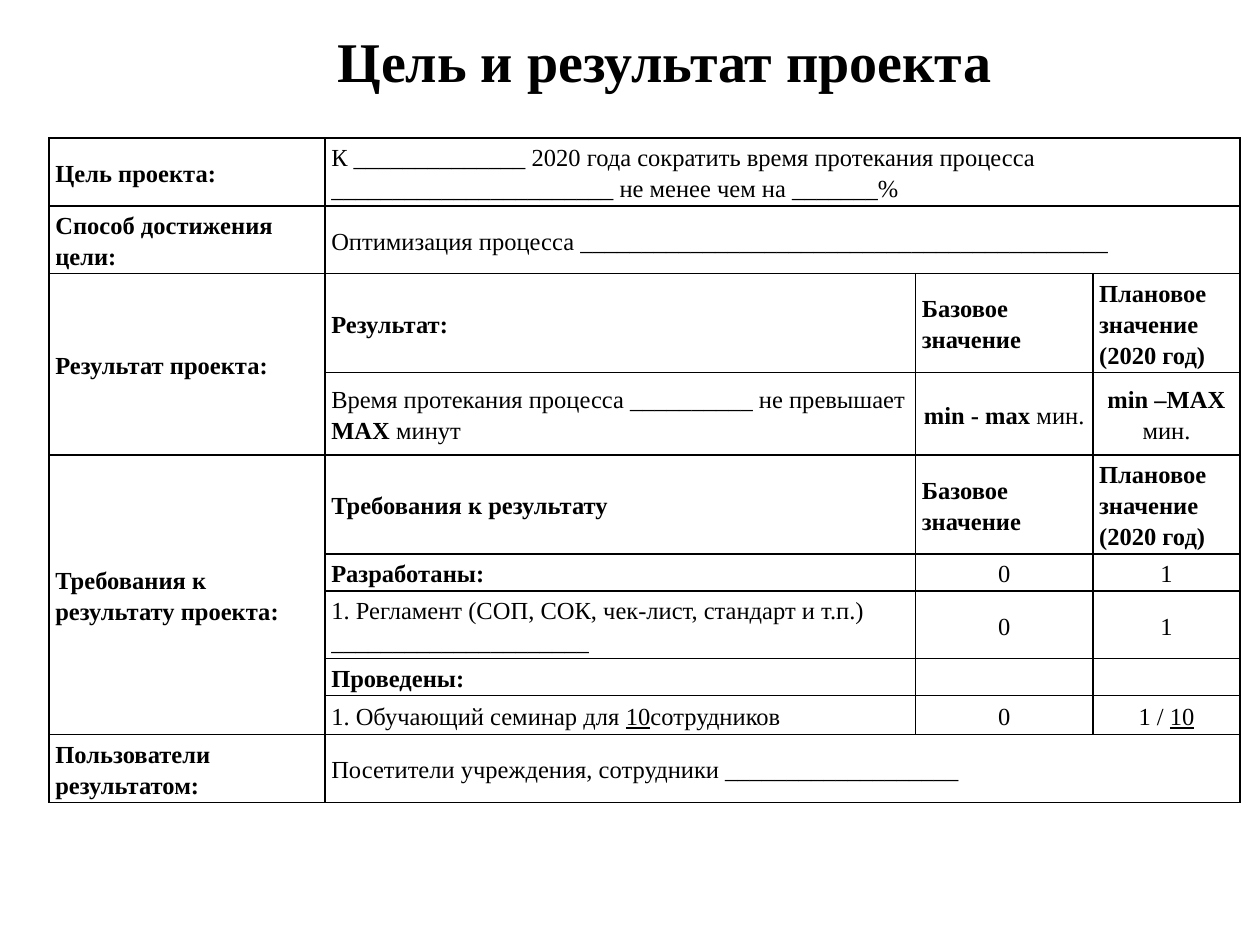
"""Build a slide with the goal and result table of a project."""
from lxml.etree import SubElement
from pptx import Presentation
from pptx.dml.color import RGBColor
from pptx.enum.text import MSO_ANCHOR, MSO_AUTO_SIZE, PP_ALIGN
from pptx.oxml.ns import qn
from pptx.util import Pt

BLACK = RGBColor(0, 0, 0)
WHITE = RGBColor(255, 255, 255)
FONT = "Times New Roman"
BOLD, UNDERLINE, PLAIN = "bold", "underline", "plain"

TITLE = "Цель и результат проекта"
COLUMN_WIDTHS = [157.7, 337.5, 101.3, 84.2]
ROW_HEIGHTS = [38.8, 38.8, 56.6, 47, 56.6, 21.1, 38.8, 21.1, 22.3, 38.8]
BASE = [("Базовое значение", BOLD)]
PLAN = [("Плановое значение (2020 год)", BOLD)]

ROWS = [
    [[("Цель проекта:", BOLD)],
     [("К ______________ 2020 года сократить время протекания процесса "
       "_______________________ не менее чем на _______%", PLAIN)]],
    [[("Способ достижения цели:", BOLD)],
     [("Оптимизация процесса ___________________________________________", PLAIN)]],
    [[("Результат проекта:", BOLD)], [("Результат:", BOLD)], BASE, PLAN],
    [[],
     [("Время протекания процесса __________ не превышает ", PLAIN),
      ("MAX", BOLD), (" минут", PLAIN)],
     [("min - max", BOLD), (" мин.", PLAIN)],
     [("min –MAX", BOLD), (" мин.", PLAIN)]],
    [[("Требования к результату проекта:", BOLD)],
     [("Требования к результату", BOLD)], BASE, PLAN],
    [[], [("Разработаны:", BOLD)], [("0", PLAIN)], [("1", PLAIN)]],
    [[],
     [("1. Регламент (СОП, СОК, чек-лист, стандарт и т.п.) "
       "_____________________", PLAIN)],
     [("0", PLAIN)], [("1", PLAIN)]],
    [[], [("Проведены:", BOLD)], [], []],
    [[],
     [("1. Обучающий семинар для ", PLAIN), ("10", UNDERLINE), ("сотрудников", PLAIN)],
     [("0", PLAIN)], [("1 / ", PLAIN), ("10", UNDERLINE)]],
    [[("Пользователи результатом:", BOLD)],
     [("Посетители учреждения, сотрудники ___________________", PLAIN)]],
]
LABEL_SPANS = [(2, 3), (4, 8)]


def add_run(paragraph, text, style, size):
    run = paragraph.add_run()
    run.text = text
    font = run.font
    font.name, font.size = FONT, Pt(size)
    font.bold, font.underline = style == BOLD, style == UNDERLINE
    font.color.rgb = BLACK


def format_cell(cell):
    cell.margin_left = cell.margin_right = Pt(3.6)
    cell.margin_top = cell.margin_bottom = Pt(1.44)
    cell.vertical_anchor = MSO_ANCHOR.MIDDLE
    properties = cell._tc.get_or_add_tcPr()
    for side in ("a:lnL", "a:lnR", "a:lnT", "a:lnB"):
        line = SubElement(properties, qn(side), w=str(Pt(1)))
        fill = SubElement(line, qn("a:solidFill"))
        SubElement(fill, qn("a:srgbClr"), val=str(BLACK))
    cell.fill.solid()
    cell.fill.fore_color.rgb = WHITE
    cell.text_frame.paragraphs[0]._p.get_or_add_endParaRPr().set("sz", "1400")


def fill_cell(cell, runs, centred):
    paragraph = cell.text_frame.paragraphs[0]
    paragraph.line_spacing = 1.15
    paragraph.alignment = PP_ALIGN.CENTER if centred else PP_ALIGN.LEFT
    for text, style in runs:
        add_run(paragraph, text, style, 14)


def add_title(slide):
    title = slide.shapes.title
    title.left, title.top, title.width, title.height = Pt(90), Pt(11.5), Pt(579.6), Pt(106.6)
    frame = title.text_frame
    frame.auto_size = MSO_AUTO_SIZE.NONE
    frame.vertical_anchor = MSO_ANCHOR.TOP
    paragraph = frame.paragraphs[0]
    paragraph.alignment = PP_ALIGN.CENTER
    paragraph.space_before = Pt(4)
    add_run(paragraph, TITLE, BOLD, 32)


def add_goal_table(slide):
    table = slide.shapes.add_table(
        len(ROWS), len(COLUMN_WIDTHS), Pt(28), Pt(78.8),
        Pt(sum(COLUMN_WIDTHS)), Pt(sum(ROW_HEIGHTS))).table
    table.first_row = table.horz_banding = False
    for column, width in zip(table.columns, COLUMN_WIDTHS):
        column.width = Pt(width)
    for row, height in zip(table.rows, ROW_HEIGHTS):
        row.height = Pt(height)
    for cell in table.iter_cells():
        format_cell(cell)
    for row_index, row in enumerate(ROWS):
        for column_index, runs in enumerate(row):
            centred = column_index >= 2 and runs not in (BASE, PLAN)
            fill_cell(table.cell(row_index, column_index), runs, centred)
        if len(row) == 2:
            table.cell(row_index, 1).merge(table.cell(row_index, 3))
    for first, last in LABEL_SPANS:
        table.cell(first, 0).merge(table.cell(last, 0))


def main():
    presentation = Presentation()
    presentation.slide_width, presentation.slide_height = Pt(720), Pt(540)
    slide = presentation.slides.add_slide(presentation.slide_layouts[5])
    add_title(slide)
    add_goal_table(slide)
    presentation.save("out.pptx")


if __name__ == "__main__":
    main()
